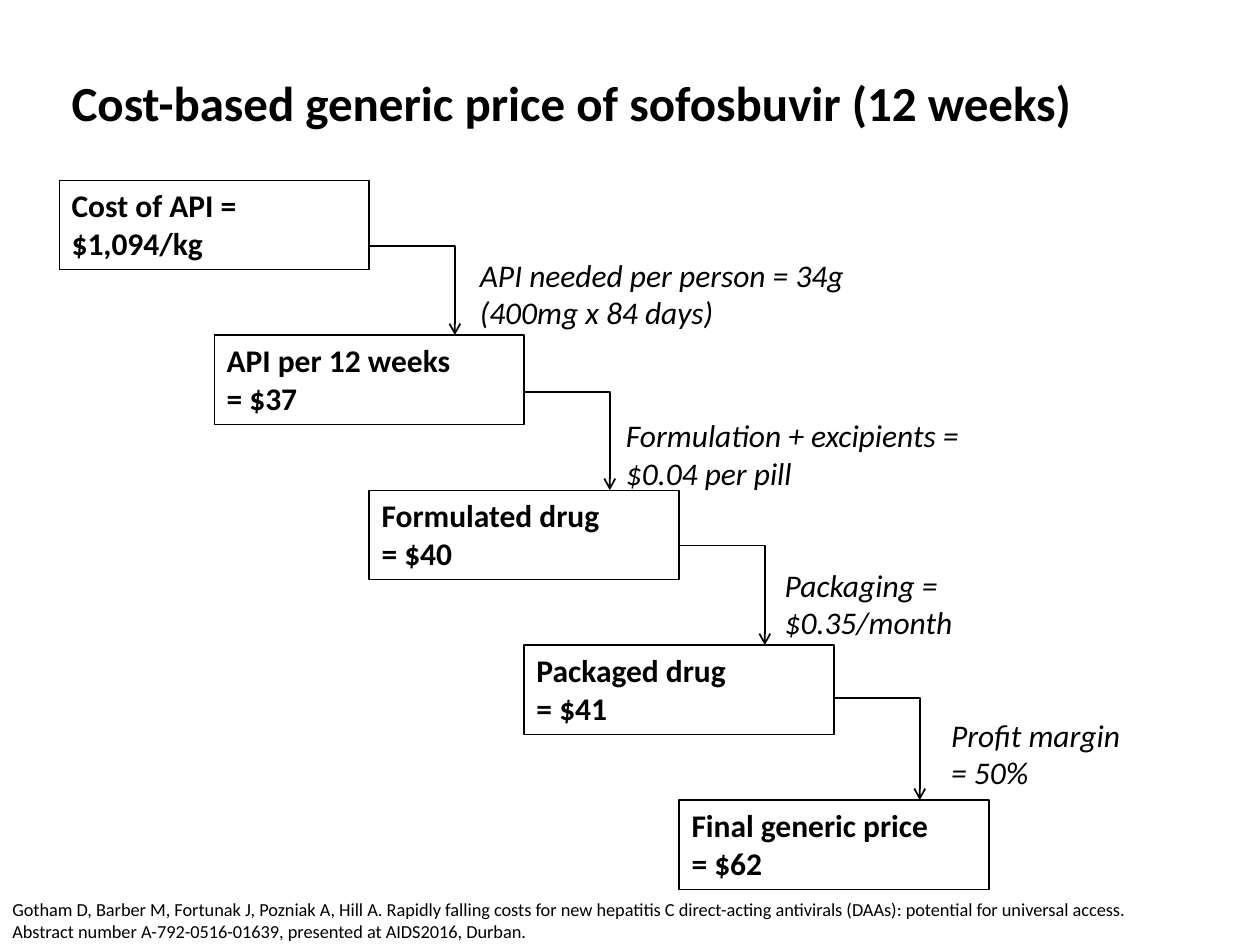
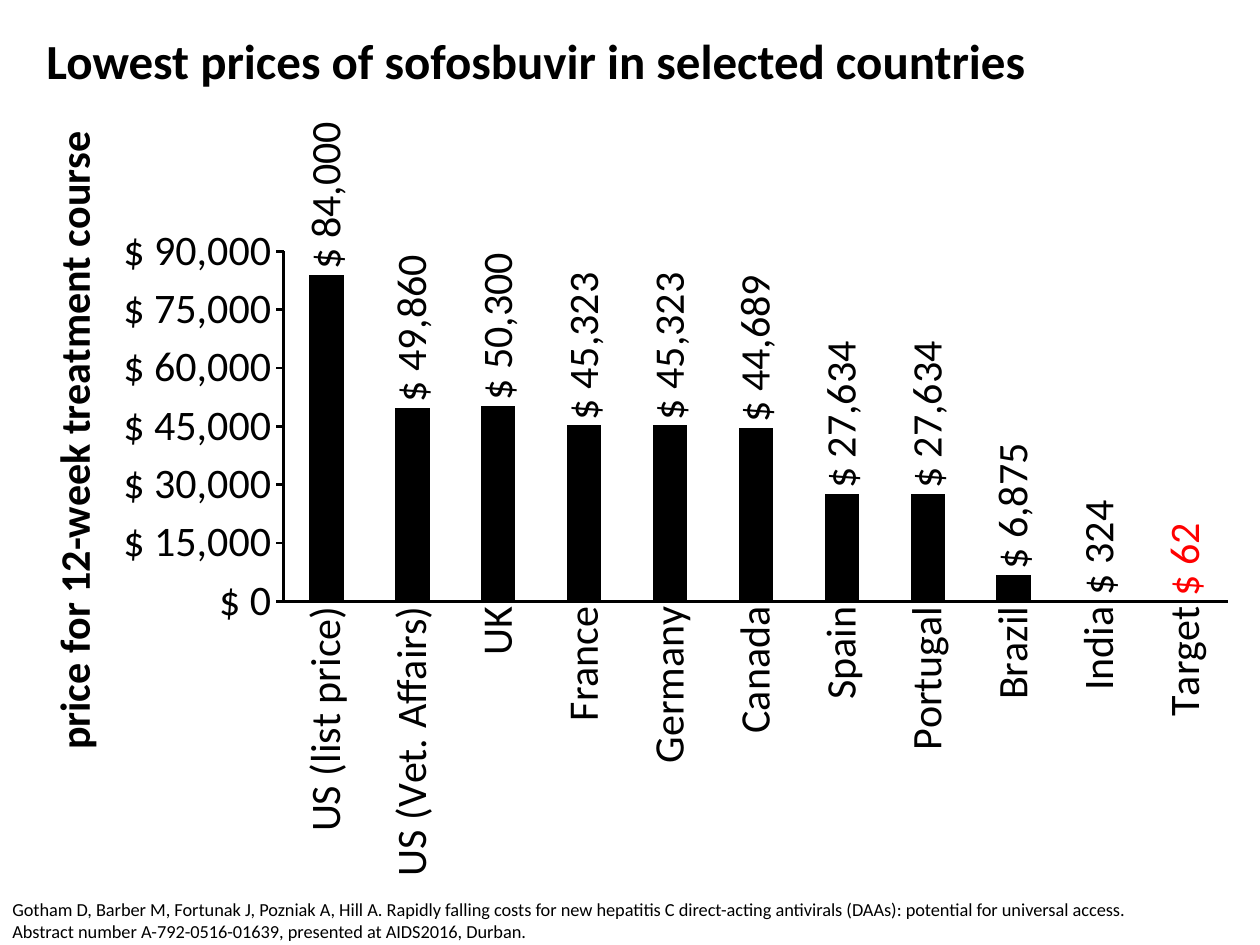
from dataclasses import dataclass

from lxml import etree
from pptx import Presentation
from pptx.chart.data import CategoryChartData
from pptx.dml.color import RGBColor
from pptx.enum.chart import XL_CHART_TYPE, XL_LABEL_POSITION, XL_TICK_MARK
from pptx.enum.shapes import MSO_CONNECTOR, MSO_SHAPE
from pptx.enum.text import MSO_ANCHOR, PP_ALIGN
from pptx.oxml.ns import qn
from pptx.util import Inches, Pt

RECTANGLE = MSO_SHAPE.RECTANGLE
ELBOW = MSO_CONNECTOR.ELBOW
TOP, LEFT = MSO_ANCHOR.TOP, PP_ALIGN.LEFT
COLUMNS = XL_CHART_TYPE.COLUMN_CLUSTERED
OUTSIDE_END = XL_LABEL_POSITION.OUTSIDE_END
TICK_NONE, TICK_OUTSIDE = XL_TICK_MARK.NONE, XL_TICK_MARK.OUTSIDE


@dataclass(frozen=True)
class Theme:
    """Colours, font and type sizes shared by the slides."""

    ink: RGBColor = RGBColor(0, 0, 0)
    target: RGBColor = RGBColor(255, 0, 0)
    font: str = "Calibri"
    title: float = 28
    chart: float = 24
    body: float = 18
    source: float = 10.5


THEME = Theme()
DOLLARS = r"[$$]\ #,##0"
UPWARD = "-5400000"
SOURCE = (
    "Gotham D, Barber M, Fortunak J, Pozniak A, Hill A. Rapidly falling costs for new "
    "hepatitis C direct-acting antivirals (DAAs): potential for universal access.",
    "Abstract number A-792-0516-01639, presented at AIDS2016, Durban.",
)

STEPS = [
    ("Cost of API =", "$1,094/kg"),
    ("API per 12 weeks", "= $37"),
    ("Formulated drug", "= $40"),
    ("Packaged drug", "= $41"),
    ("Final generic price", "= $62"),
]
STEP_SHIFT, STEP_WIDTH, STEP_HEIGHT = 1.23, 2.46, 0.71
ARROW_RUN = 0.68

ADDED_COSTS = [
    (("API needed per person = 34g", "(400mg x 84 days)"), (3.24, 0.55, 3.83), 0.52),
    (("Formulation + excipients =", "$0.04 per pill"), (4.4, 1.82, 3.23), 0.45),
    (("Packaging =", "$0.35/month"), (5.66, 3.01, 2.14), 0.44),
    (("Profit margin", "= 50%"), (6.98, 4.2, 1.69), 0.42),
]

PRICES = {
    "US (list price)": 84000,
    "US (Vet. Affairs)": 49860,
    "UK": 50300,
    "France": 45323,
    "Germany": 45323,
    "Canada": 44689,
    "Spain": 27634,
    "Portugal": 27634,
    "Brazil": 6875,
    "India": 324,
    "Target": 62,
}


def style_font(font, size, color=THEME.ink, bold=False, italic=False):
    """Apply the theme font with the given size and emphasis."""
    font.name, font.size = THEME.font, Pt(size)
    font.bold, font.italic = bold, italic
    font.color.rgb = color


def write_lines(shape, lines, size, bold=False, italic=False, wrap=True):
    """Write lines as the runs of one left-aligned paragraph."""
    frame = shape.text_frame
    frame.word_wrap, frame.vertical_anchor = wrap, TOP
    para = frame.paragraphs[0]
    para.alignment = LEFT
    for index, line in enumerate(lines):
        if index:
            para.add_line_break()
        span = para.add_run()
        span.text = line
        style_font(span.font, size, bold=bold, italic=italic)


def add_text(page, box, lines, size, **style):
    """Add a text box at (left, top, width, height)."""
    shape = page.shapes.add_textbox(*map(Inches, box))
    write_lines(shape, lines, size, **style)


def add_title(page, box, title):
    """Add the bold slide title."""
    add_text(page, box, [title], THEME.title, bold=True)


def add_source(page):
    """Add the reference at the foot of the slide."""
    add_text(page, (0, 7.08, 10, 0.42), SOURCE, THEME.source)


def add_step(page, box, lines):
    """Add one outlined step of the cascade."""
    step = page.shapes.add_shape(RECTANGLE, *map(Inches, box))
    step.shadow.inherit = False
    step.fill.background()
    step.line.color.rgb, step.line.width = THEME.ink, Pt(0.75)
    write_lines(step, lines, THEME.body, bold=True)


def add_bent_arrow(page, start, end):
    """Add an arrow that runs right and then down."""
    arrow = page.shapes.add_connector(ELBOW, *map(Inches, start + end))
    arrow.line.color.rgb, arrow.line.width = THEME.ink, Pt(1)
    properties = arrow._element.spPr
    properties.find(qn("a:prstGeom")).set("prst", "bentConnector2")
    etree.SubElement(properties.find(qn("a:ln")), qn("a:tailEnd"), type="arrow")
    etree.SubElement(properties, qn("a:effectLst"))


def add_cascade(page, left, top):
    """Add the steps, the arrows between them and the costs added."""
    corners = [
        (left + index * STEP_SHIFT, top + index * STEP_SHIFT)
        for index in range(len(STEPS))
    ]
    for (step_left, step_top), lines in zip(corners, STEPS):
        add_step(page, (step_left, step_top, STEP_WIDTH, STEP_HEIGHT), lines)
    for (step_left, step_top), (lines, place, exit_drop) in zip(corners, ADDED_COSTS):
        right = step_left + STEP_WIDTH
        start = (right, step_top + exit_drop)
        add_bent_arrow(page, start, (right + ARROW_RUN, step_top + STEP_SHIFT))
        across, down, width = place
        box = (left + across, top + down, width, STEP_HEIGHT)
        add_text(page, box, lines, THEME.body, italic=True, wrap=False)


def set_layout(parent, index, **fractions):
    """Fix a chart part at fractions of the chart space."""
    for old in parent.findall(qn("c:layout")):
        parent.remove(old)
    layout = etree.Element(qn("c:layout"))
    manual = etree.SubElement(layout, qn("c:manualLayout"))
    if "w" in fractions:
        etree.SubElement(manual, qn("c:layoutTarget"), val="inner")
    for name in ("xMode", "yMode"):
        etree.SubElement(manual, qn("c:" + name), val="edge")
    for name, value in fractions.items():
        etree.SubElement(manual, qn("c:" + name), val=str(value))
    parent.insert(index, layout)


def turn_upward(element):
    """Rotate all text in a chart element to read upward."""
    for body in element.iter(qn("a:bodyPr")):
        body.set("rot", UPWARD)
        body.set("vert", "horz")


def style_axis(axis, tick_mark):
    """Give an axis its line, tick marks and label font."""
    axis.has_major_gridlines = False
    axis.major_tick_mark, axis.minor_tick_mark = tick_mark, TICK_NONE
    axis.format.line.color.rgb, axis.format.line.width = THEME.ink, Pt(1.5)
    style_font(axis.tick_labels.font, THEME.chart)


def style_price_axis(axis):
    """Scale and title the price axis."""
    style_axis(axis, TICK_OUTSIDE)
    axis.minimum_scale, axis.maximum_scale, axis.major_unit = 0, 90000, 15000
    axis.tick_labels.number_format = DOLLARS
    axis.tick_labels.number_format_is_linked = False
    span = axis.axis_title.text_frame.paragraphs[0].add_run()
    span.text = "price for 12-week treatment course"
    style_font(span.font, THEME.chart, bold=True)
    title = axis.axis_title._element
    turn_upward(title)
    set_layout(title, 1, x=0.07, y=0.05)


def label_prices(series):
    """Label each column with its price, the target in red."""
    labels = series.data_labels
    labels.show_value, labels.position = True, OUTSIDE_END
    labels.number_format, labels.number_format_is_linked = DOLLARS, False
    style_font(labels.font, THEME.chart)
    target = series.points[len(PRICES) - 1].data_label
    style_font(target.font, THEME.chart, THEME.target)
    target.position = OUTSIDE_END
    number_format = etree.Element(qn("c:numFmt"), formatCode=DOLLARS, sourceLinked="0")
    target_text = labels._element.find(qn("c:dLbl")).find(qn("c:txPr"))
    target_text.addprevious(number_format)
    turn_upward(labels._element)


def add_price_chart(page, box):
    """Add the column chart of prices by country."""
    data = CategoryChartData()
    data.categories = list(PRICES)
    data.add_series("Series 1", list(PRICES.values()))
    chart = page.shapes.add_chart(COLUMNS, *map(Inches, box), data).chart
    chart.has_legend = chart.has_title = False
    style_font(chart.font, THEME.chart)
    plot = chart.plots[0]
    plot.gap_width, plot.vary_by_categories = 150, False
    series = plot.series[0]
    series.format.fill.solid()
    series.format.fill.fore_color.rgb = THEME.ink
    style_axis(chart.category_axis, TICK_NONE)
    turn_upward(chart.category_axis._element)
    style_price_axis(chart.value_axis)
    label_prices(series)
    plot_area = chart._chartSpace.chart.plotArea
    set_layout(plot_area, 0, x=0.257, y=0.197, w=0.719, h=0.404)


def build_cost_slide(page):
    """Build the slide that derives the generic price."""
    add_cascade(page, 0.47, 1.43)
    add_title(page, (0.47, 0.53, 9.5, 0.57),
              "Cost-based generic price of sofosbuvir (12 weeks)")
    add_source(page)


def build_price_slide(page):
    """Build the slide that compares prices by country."""
    add_source(page)
    add_title(page, (0.27, 0.19, 9.5, 0.57),
              "Lowest prices of sofosbuvir in selected countries")
    add_price_chart(page, (-0.43, 0.64, 10.43, 6.88))


def main():
    """Build and save the deck."""
    deck = Presentation()
    deck.slide_width, deck.slide_height = Inches(10), Inches(7.5)
    blank = deck.slide_layouts[6]
    for build in (build_cost_slide, build_price_slide):
        build(deck.slides.add_slide(blank))
    deck.save("out.pptx")


if __name__ == "__main__":
    main()
